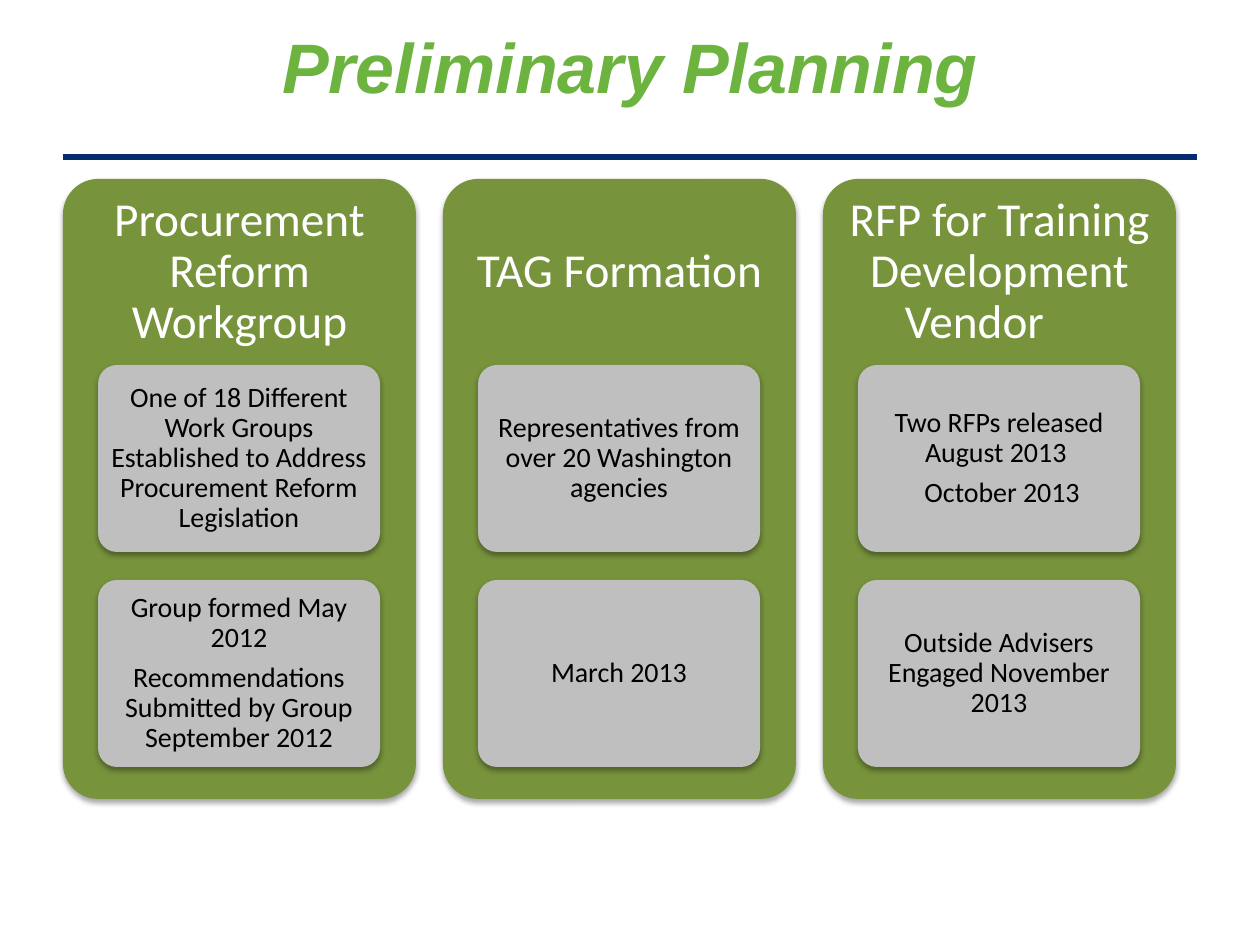
"""Build the Preliminary Planning slide with three columns of cards."""
from lxml import etree
from pptx import Presentation, util as u
from pptx.dml.color import RGBColor
from pptx.enum import shapes, text
from pptx.oxml import parse_xml
from pptx.oxml.ns import nsdecls, qn

HUES = {"title": "6DB33F", "rule": "032B6D", "panel": "77933C",
        "card": "BFBFBF", "light": "FFFFFF", "dark": "000000"}
LEFT, TOP, PITCH = 63, 179, 380
WIDE, TALL = 353, 620
INDENT, CARD, HIGH = 35, 282, 187
FIRST, STEP, PAD = 365, 215, 5

PLAN = [
    ("Procurement Reform Workgroup", [
        ["One of 18 Different Work Groups Established to Address "
         "Procurement Reform Legislation"],
        ["Group formed May 2012",
         "Recommendations Submitted by Group September 2012"]]),
    ("TAG Formation", [
        ["Representatives from over 20 Washington agencies"],
        ["March 2013"]]),
    ("RFP for Training Development Vendor\t", [
        ["Two RFPs released August 2013 ", " October 2013"],
        ["Outside Advisers Engaged November 2013"]]),
]


def px(num):
    return u.Emu(round(num * 914400 / 126))


def hue(name):
    return RGBColor.from_string(HUES[name])


class Deck:
    """Hold the style and the current slide."""

    def __init__(self):
        self.prs = Presentation()
        self.prs.slide_width, self.prs.slide_height = px(1260), px(945)
        self.slide = self.prs.slides.add_slide(self.prs.slide_layouts[5])

    def font(self, para, face, size, color):
        para.alignment = text.PP_ALIGN.CENTER
        para.font.name, para.font.size = face, u.Pt(size)
        para.font.color.rgb = hue(color)

    def title(self, words, box):
        head = self.slide.shapes.title
        head.left, head.top, head.width, head.height = map(px, box)
        frame = head.text_frame
        frame.text = words
        frame.vertical_anchor = text.MSO_ANCHOR.TOP
        frame.margin_top = px(13)
        para = frame.paragraphs[0]
        self.font(para, "Arial", 40, "title")
        para.font.bold = para.font.italic = True

    def rule(self, left, right, top):
        line = self.slide.shapes.add_connector(
            shapes.MSO_CONNECTOR.STRAIGHT, px(left), px(top), px(right), px(top))
        line.line.color.rgb, line.line.width = hue("rule"), u.Pt(3)
        etree.SubElement(line._element.spPr, qn("a:effectLst"))

    def panel(self, box, color):
        shape = self.slide.shapes.add_shape(
            shapes.MSO_SHAPE.ROUNDED_RECTANGLE, *map(px, box))
        shape.adjustments[0] = 0.1
        shape.fill.solid()
        shape.fill.fore_color.rgb = hue(color)
        shape.line.fill.background()
        shape._element.spPr.append(parse_xml(
            f'<a:effectLst {nsdecls("a")}><a:outerShdw blurRad="40000" '
            'dist="23000" dir="5400000" rotWithShape="0"><a:srgbClr val="000000">'
            '<a:alpha val="35000"/></a:srgbClr></a:outerShdw></a:effectLst>'))

    def label(self, box, lines, size, color, side, edge):
        frame = self.slide.shapes.add_textbox(*map(px, box)).text_frame
        frame.word_wrap = True
        frame.vertical_anchor = text.MSO_ANCHOR.MIDDLE
        frame.margin_left = frame.margin_right = px(side)
        frame.margin_top = frame.margin_bottom = px(edge)
        frame.text = "\n".join(lines)
        for para in frame.paragraphs:
            para.line_spacing = 0.9
            para.space_after = u.Pt(round(size * 0.35, 1))
            self.font(para, "Calibri", size, color)

    def column(self, left, head, cards):
        self.panel((left, TOP, WIDE, TALL), "panel")
        self.label((left, TOP, WIDE, HIGH), [head], 27, "light", 14, 14)
        for row, lines in enumerate(cards):
            x, y = left + INDENT, FIRST + row * STEP
            self.panel((x, y, CARD, HIGH), "card")
            self.label((x + PAD, y + PAD, CARD - 2 * PAD, HIGH - 2 * PAD),
                       lines, 16, "dark", 5, 4)


def main():
    deck = Deck()
    deck.rule(63, 1197, 157)
    deck.title("Preliminary Planning", (63, 10, 1134, 126))
    for col, (head, cards) in enumerate(PLAN):
        deck.column(LEFT + col * PITCH, head, cards)
    deck.prs.save("out.pptx")


if __name__ == "__main__":
    main()
